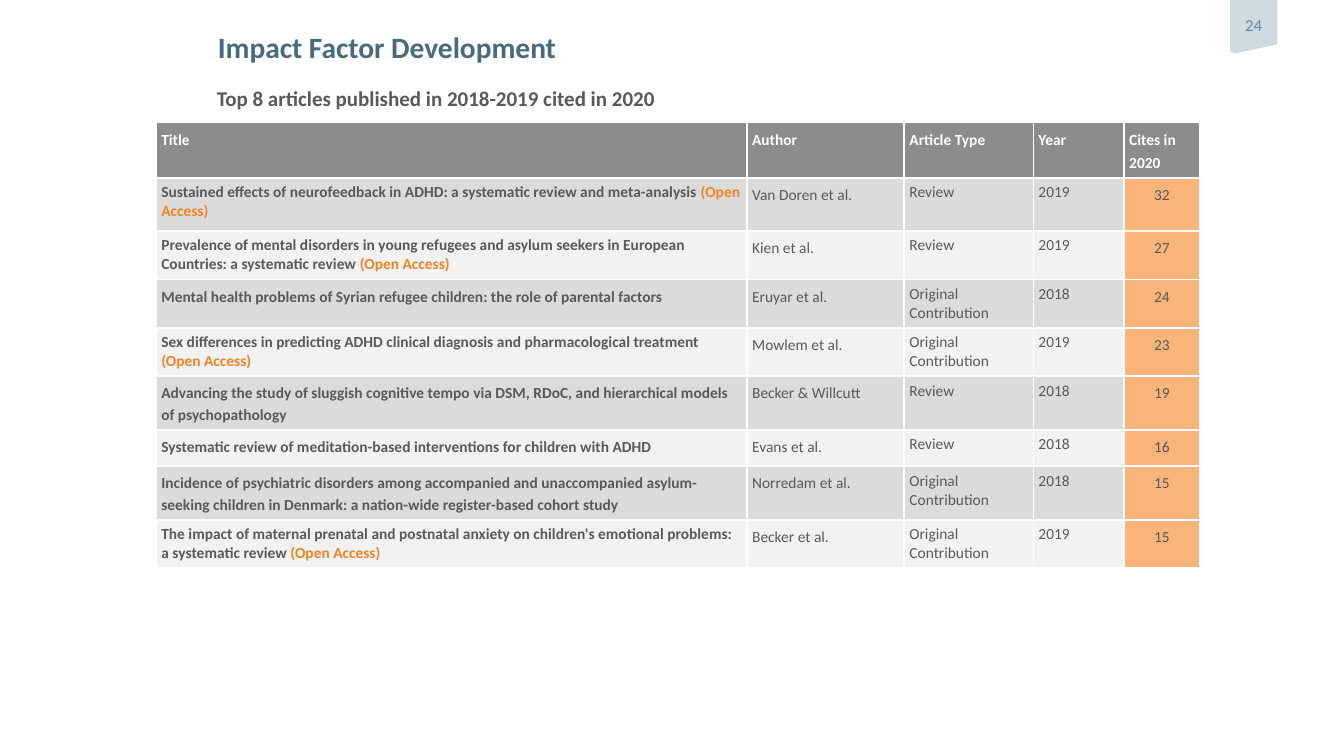
from dataclasses import dataclass
from lxml.etree import SubElement
from pptx import Presentation
from pptx.dml.color import RGBColor as Color
from pptx.enum.text import MSO_ANCHOR as Anchor, MSO_AUTO_SIZE as AutoSize, PP_ALIGN as Align
from pptx.oxml.ns import qn
from pptx.util import Inches, Pt


@dataclass(frozen=True)
class Theme:
    font: str = "Calibri"
    title: str = "486A7E"
    text: str = "58595B"
    access: str = "F58220"
    white: str = "FFFFFF"
    header: str = "8C8C8C"
    bands: tuple = ("DBDBDB", "F2F2F2")
    cites: str = "F9B479"
    tab: str = "CEDBE0"
    number: str = "628BA3"
    title_size: int = 21
    subtitle_size: int = 15
    number_size: int = 12
    table_size: int = 11
    border: float = 1.5


@dataclass(frozen=True)
class Box:
    left: float
    top: float
    width: float
    height: float


THEME = Theme()
HEADINGS = ("Title", "Author", "Article Type", "Year", "Cites in 2020")
COLUMN_WIDTHS = (5.86, 1.56, 1.28, 0.9, 0.75)
ROW_HEIGHTS = (0.55, 0.53, 0.48, 0.48, 0.48, 0.53, 0.36, 0.53, 0.48)
ARTICLES = (
    ("Sustained effects of neurofeedback in ADHD: a systematic review and meta-analysis",
     True, "Van Doren et al.", "Review", 2019, 32),
    ("Prevalence of mental disorders in young refugees and asylum seekers in European "
     "Countries: a systematic review", True, "Kien et al.", "Review", 2019, 27),
    ("Mental health problems of Syrian refugee children: the role of parental factors",
     False, "Eruyar et al.", "Original Contribution", 2018, 24),
    ("Sex differences in predicting ADHD clinical diagnosis and pharmacological treatment",
     True, "Mowlem et al.", "Original Contribution", 2019, 23),
    ("Advancing the study of sluggish cognitive tempo via DSM, RDoC, and hierarchical "
     "models of psychopathology", False, "Becker & Willcutt", "Review", 2018, 19),
    ("Systematic review of meditation-based interventions for children with ADHD",
     False, "Evans et al.", "Review", 2018, 16),
    ("Incidence of psychiatric disorders among accompanied and unaccompanied "
     "asylum-seeking children in Denmark: a nation-wide register-based cohort study",
     False, "Norredam et al.", "Original Contribution", 2018, 15),
    ("The impact of maternal prenatal and postnatal anxiety on children's emotional "
     "problems: a systematic review", True, "Becker et al.", "Original Contribution", 2019, 15),
)


def add_run(para, text, size, color, bold=False):
    run = para.add_run()
    run.text = text
    run.font.name = THEME.font
    run.font.size = Pt(size)
    run.font.bold = bold
    run.font.color.rgb = Color.from_string(color)


def set_margins(frame, left=0, top=0, right=0, bottom=0):
    frame.margin_left, frame.margin_top = Inches(left), Inches(top)
    frame.margin_right, frame.margin_bottom = Inches(right), Inches(bottom)


def fill_heading(holder, box, text, size, color, spacing):
    holder.left, holder.top = Inches(box.left), Inches(box.top)
    holder.width, holder.height = Inches(box.width), Inches(box.height)
    frame = holder.text_frame
    frame.word_wrap = True
    frame.auto_size = AutoSize.NONE
    frame.vertical_anchor = Anchor.TOP
    set_margins(frame)
    para = frame.paragraphs[0]
    para.alignment = Align.LEFT
    para.line_spacing = spacing
    para.space_before = Pt(0)
    add_run(para, text, size, color, True)


def add_page_tab(page, box, number):
    right, bottom = box.left + box.width, box.top + box.height
    outline = ((right, box.top), (right, bottom - 0.09), (box.left + 0.05, bottom),
               (box.left + 0.02, bottom - 0.01), (box.left, bottom - 0.03))
    builder = page.shapes.build_freeform(Inches(box.left), Inches(box.top))
    builder.add_line_segments([(Inches(x), Inches(y)) for x, y in outline], close=True)
    tab = builder.convert_to_shape()
    tab.shadow.inherit = False
    tab.fill.solid()
    tab.fill.fore_color.rgb = Color.from_string(THEME.tab)
    tab.line.fill.background()
    frame = tab.text_frame
    frame.word_wrap = False
    frame.vertical_anchor = Anchor.MIDDLE
    set_margins(frame, bottom=0.04)
    para = frame.paragraphs[0]
    para.alignment = Align.CENTER
    add_run(para, str(number), THEME.number_size, THEME.number)


def style_cell(cell, fill):
    set_margins(cell, 0.05, 0.05, 0.05, 0.05)
    properties = cell._tc.get_or_add_tcPr()
    for side in ("a:lnL", "a:lnR", "a:lnT", "a:lnB"):
        line = SubElement(properties, qn(side), w=str(Pt(THEME.border)))
        SubElement(SubElement(line, qn("a:solidFill")), qn("a:srgbClr"), val=THEME.white)
    cell.fill.solid()
    cell.fill.fore_color.rgb = Color.from_string(fill)


def write_cell(cell, runs, fill, spacing=1.0, align=Align.LEFT):
    style_cell(cell, fill)
    para = cell.text_frame.paragraphs[0]
    para.alignment = align
    para.line_spacing = spacing
    for text, color, bold in runs:
        add_run(para, text, THEME.table_size, color, bold)


def write_article(cells, article, band):
    title, is_open, author, kind, year, cites = article
    title_runs = [(title, THEME.text, True)]
    if is_open:
        title_runs = [(title + " ", THEME.text, True), ("(Open Access)", THEME.access, True)]
    write_cell(cells[0], title_runs, band, 1.0 if is_open else 1.15)
    write_cell(cells[1], [(author, THEME.text, False)], band, 1.15)
    write_cell(cells[2], [(kind, THEME.text, False)], band)
    write_cell(cells[3], [(str(year), THEME.text, False)], band)
    write_cell(cells[4], [(str(cites), THEME.text, False)], THEME.cites, 1.15, Align.CENTER)


def add_article_table(page, box):
    table = page.shapes.add_table(
        len(ROW_HEIGHTS), len(COLUMN_WIDTHS), Inches(box.left), Inches(box.top),
        Inches(box.width), Inches(box.height)).table
    table.horz_banding = False
    for column, width in zip(table.columns, COLUMN_WIDTHS):
        column.width = Inches(width)
    for row, height in zip(table.rows, ROW_HEIGHTS):
        row.height = Inches(height)
    for cell, heading in zip(table.rows[0].cells, HEADINGS):
        write_cell(cell, [(heading, THEME.white, True)], THEME.header, 1.2)
    for index, article in enumerate(ARTICLES):
        write_article(list(table.rows[index + 1].cells), article, THEME.bands[index % 2])


def add_ranking_page(deck):
    page = deck.slides.add_slide(deck.slide_layouts[0])
    fill_heading(page.shapes.title, Box(2.16, 0.33, 9.01, 0.41),
                 "Impact Factor Development", THEME.title_size, THEME.title, 0.9)
    fill_heading(page.placeholders[1], Box(2.15, 0.85, 9.01, 0.41),
                 "Top 8 articles published in 2018-2019 cited in 2020",
                 THEME.subtitle_size, THEME.text, 1.0)
    add_page_tab(page, Box(12.2, 0, 0.47, 0.53), 24)
    add_article_table(page, Box(1.55, 1.21, sum(COLUMN_WIDTHS), sum(ROW_HEIGHTS)))


def main():
    deck = Presentation()
    deck.slide_width, deck.slide_height = Inches(13.33), Inches(7.5)
    add_ranking_page(deck)
    deck.save("out.pptx")


if __name__ == "__main__":
    main()
